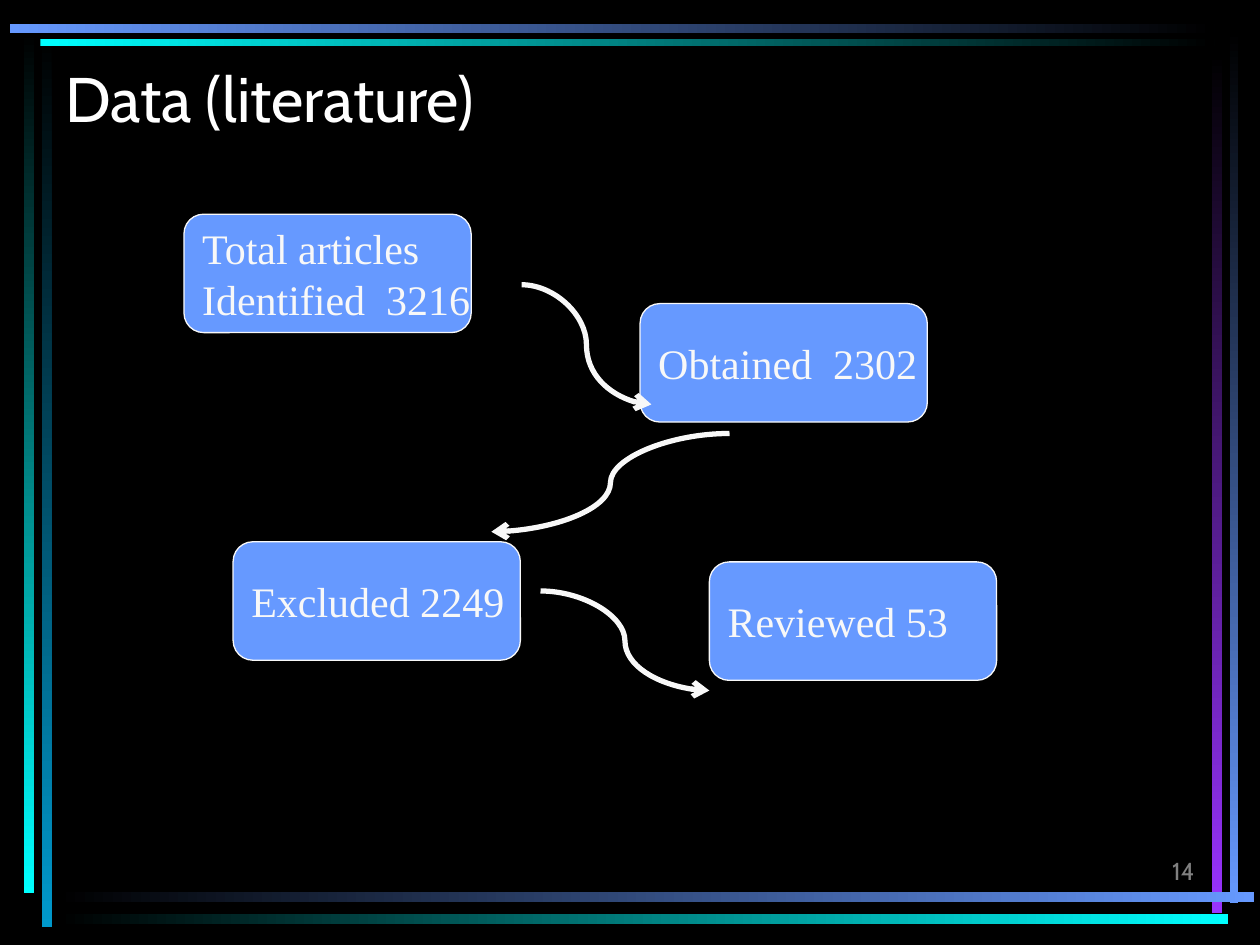
"""Build the literature data slide: four article counts joined by curved arrows."""
from typing import NamedTuple

import pptx
import pptx.dml.color
import pptx.enum.shapes
import pptx.enum.text
import pptx.oxml
import pptx.oxml.ns
import pptx.shapes.base
import pptx.slide
import pptx.util
from pptx.dml.color import RGBColor
from pptx.util import Inches

BLACK = RGBColor(0x00, 0x00, 0x00)
WHITE = RGBColor(0xFF, 0xFF, 0xFF)
OFF_WHITE = RGBColor(0xF8, 0xF8, 0xF8)
GRAY = RGBColor(0x80, 0x80, 0x80)
BLUE = RGBColor(0x66, 0x99, 0xFF)
TEAL = RGBColor(0x00, 0x99, 0xCC)
CYAN = RGBColor(0x00, 0xFF, 0xFF)
PURPLE = RGBColor(0x99, 0x33, 0xFF)

BOX_WIDTH, BOX_HEIGHT = 2.28, 0.94


class Bar(NamedTuple):
    left: float
    top: float
    width: float
    height: float
    start: RGBColor
    end: RGBColor


class Stage(NamedTuple):
    left: float
    top: float
    lines: tuple[str, ...]


class Arrow(NamedTuple):
    begin_x: float
    begin_y: float
    end_x: float
    end_y: float


class Label(NamedTuple):
    left: float
    top: float
    width: float
    height: float
    text: str
    size: int
    color: RGBColor
    align: pptx.enum.text.PP_ALIGN
    anchor: pptx.enum.text.MSO_ANCHOR


BARS = [
    Bar(0.33, 0.28, 0.08, 7.08, BLACK, TEAL),
    Bar(0.19, 0.25, 0.08, 6.84, BLACK, CYAN),
    Bar(9.76, 0.24, 0.07, 6.93, BLACK, BLUE),
    Bar(9.62, 0.42, 0.08, 6.83, BLACK, PURPLE),
    Bar(0.45, 7.08, 9.5, 0.08, BLACK, BLUE),
    Bar(0.45, 7.25, 9.3, 0.08, BLACK, CYAN),
    Bar(0.32, 0.31, 9.32, 0.06, CYAN, BLACK),
    Bar(0.08, 0.19, 9.56, 0.07, BLUE, BLACK),
]
LABELS = [
    Label(0.42, 0.42, 8.75, 0.92, "Data (literature)", 36, WHITE,
          pptx.enum.text.PP_ALIGN.LEFT, pptx.enum.text.MSO_ANCHOR.TOP),
    Label(7.5, 6.58, 2.08, 0.5, "14", 14, GRAY,
          pptx.enum.text.PP_ALIGN.RIGHT, pptx.enum.text.MSO_ANCHOR.BOTTOM),
]
STAGES = [
    Stage(1.46, 1.7, ("Total articles", "Identified  3216")),
    Stage(5.08, 2.41, ("Obtained  2302",)),
    Stage(1.85, 4.3, ("Excluded 2249",)),
    Stage(5.63, 4.46, ("Reviewed 53",)),
]
ARROWS = [
    Arrow(4.14, 2.26, 5.17, 3.21),
    Arrow(5.79, 3.44, 3.9, 4.22),
    Arrow(4.29, 4.69, 5.63, 5.48),
]


def draw_bar(page: pptx.slide.Slide, bar: Bar) -> None:
    """Draw a frame bar shaded along its length."""
    shape = page.shapes.add_shape(
        pptx.enum.shapes.MSO_SHAPE.RECTANGLE,
        Inches(bar.left), Inches(bar.top), Inches(bar.width), Inches(bar.height))
    shape.shadow.inherit = False
    shape.line.fill.background()
    shape.fill.gradient()
    shape.fill.gradient_angle = 270 if bar.height > bar.width else 0
    for stop, color in zip(shape.fill.gradient_stops, (bar.start, bar.end)):
        stop.color.rgb = color


def write_lines(box: pptx.shapes.base.BaseShape, lines: tuple[str, ...], font_name: str,
                size: int, color: RGBColor, align: pptx.enum.text.PP_ALIGN) -> None:
    """Fill a box with one paragraph per line."""
    frame = box.text_frame
    frame.text = "\n".join(lines)
    for para in frame.paragraphs:
        para.alignment = align
        para.font.name = font_name
        para.font.size = pptx.util.Pt(size)
        para.font.color.rgb = color


def draw_label(page: pptx.slide.Slide, label: Label) -> None:
    """Draw a wrapped text box."""
    box = page.shapes.add_textbox(
        Inches(label.left), Inches(label.top), Inches(label.width), Inches(label.height))
    box.text_frame.word_wrap = True
    box.text_frame.vertical_anchor = label.anchor
    write_lines(box, (label.text,), "Cabin", label.size, label.color, label.align)


def draw_stage(page: pptx.slide.Slide, stage: Stage) -> None:
    """Draw a rounded box with an article count."""
    box = page.shapes.add_shape(
        pptx.enum.shapes.MSO_SHAPE.ROUNDED_RECTANGLE,
        Inches(stage.left), Inches(stage.top), Inches(BOX_WIDTH), Inches(BOX_HEIGHT))
    box.shadow.inherit = False
    box.fill.solid()
    box.fill.fore_color.rgb = BLUE
    box.line.color.rgb = OFF_WHITE
    box.line.width = pptx.util.Pt(0.75)
    box.text_frame.word_wrap = False
    box.text_frame.vertical_anchor = pptx.enum.text.MSO_ANCHOR.MIDDLE
    write_lines(box, stage.lines, "Times New Roman", 24, OFF_WHITE,
                pptx.enum.text.PP_ALIGN.LEFT)


def draw_arrow(page: pptx.slide.Slide, arrow: Arrow) -> None:
    """Draw a curved connector with an open arrowhead at its end."""
    connector = page.shapes.add_connector(
        pptx.enum.shapes.MSO_CONNECTOR.CURVE, *(Inches(value) for value in arrow))
    connector.line.color.rgb = OFF_WHITE
    connector.line.width = pptx.util.Pt(3)
    head = pptx.oxml.parse_xml(
        f'<a:tailEnd {pptx.oxml.ns.nsdecls("a")} type="arrow"/>')
    connector.line._get_or_add_ln().append(head)
    effects = pptx.oxml.parse_xml(f'<a:effectLst {pptx.oxml.ns.nsdecls("a")}/>')
    connector._element.spPr.append(effects)


def main() -> None:
    """Assemble and save the slide."""
    deck = pptx.Presentation()
    deck.slide_width, deck.slide_height = Inches(10), Inches(7.5)
    page = deck.slides.add_slide(deck.slide_layouts[6])
    page.background.fill.solid()
    page.background.fill.fore_color.rgb = BLACK
    for bar in BARS:
        draw_bar(page, bar)
    for label in LABELS:
        draw_label(page, label)
    for stage in STAGES:
        draw_stage(page, stage)
    for arrow in ARROWS:
        draw_arrow(page, arrow)
    deck.save("out.pptx")


if __name__ == "__main__":
    main()
